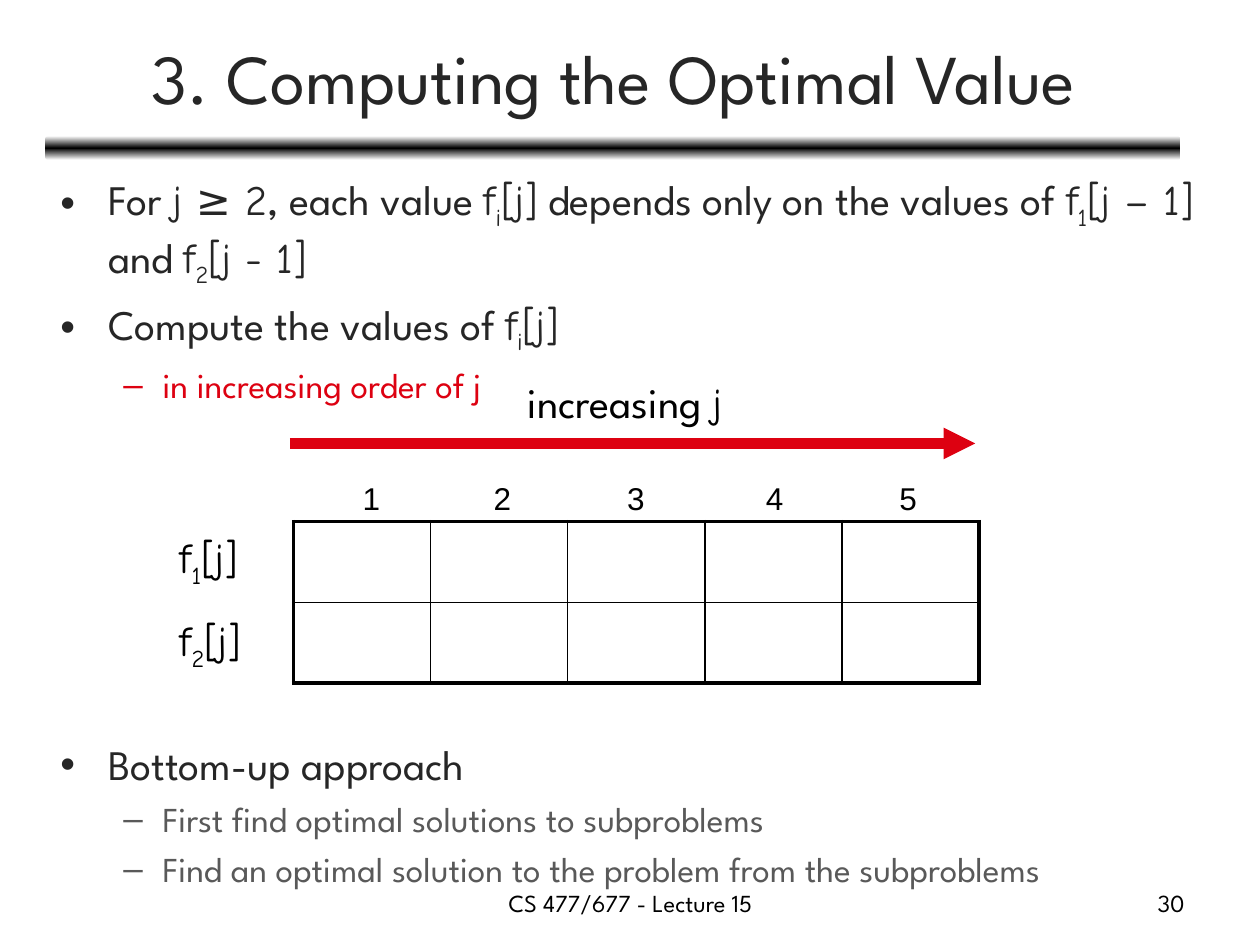
import copy

import lxml.etree
import pptx
import pptx.dml.color
import pptx.enum.shapes
import pptx.enum.text
import pptx.oxml
import pptx.oxml.ns
import pptx.util
from pptx.util import Inches, Pt

SANS, MATH = "League Spartan", "Comic Neue"
BLACK, DARK, GREY, RED = "000000", "262626", "595959", "DD0111"
ALIGN = pptx.enum.text.PP_ALIGN
qn = pptx.oxml.ns.qn
rgb = pptx.dml.color.RGBColor.from_string


def write(p, text, size, color, font=SANS, align=None):
    """Fill p; |...| marks maths, and _ makes the next character a subscript."""
    p.font.size, p.font.color.rgb = Pt(size), rgb(color)
    p.alignment = align
    parts = text.split("|")
    if len(parts) == 1:
        p.font.name = font
    for i, part in enumerate(parts):
        base, _, rest = part.partition("_")
        for piece, sub in ((base, False), (rest[:1], True), (rest[1:], False)):
            if piece:
                r = p.add_run()
                r.text = piece
                if len(parts) > 1:
                    r.font.name = MATH if i % 2 else font
                if sub:
                    r.font._element.set("baseline", "-25000")


def add_label(x, y, w, h, text, size, font=SANS, align=None):
    tf = s.shapes.add_textbox(Inches(x), Inches(y), Inches(w), Inches(h)).text_frame
    tf.word_wrap = align is not None
    write(tf.paragraphs[0], text, size, BLACK, font, align)


prs = pptx.Presentation()
prs.slide_width, prs.slide_height = Inches(10), Inches(7.5)
s = prs.slides.add_slide(prs.slide_layouts[1])

# Title and the gradient rule below it
title, body = s.placeholders
title.left, title.top, title.width, title.height = map(Inches, (0.37, 0.11, 9, 0.99))
title.text_frame.vertical_anchor = pptx.enum.text.MSO_ANCHOR.MIDDLE
title.text_frame.auto_size = pptx.enum.text.MSO_AUTO_SIZE.NONE
write(title.text_frame.paragraphs[0], "3. Computing the Optimal Value", 40, DARK,
      align=ALIGN.CENTER)

rule = s.shapes.add_shape(pptx.enum.shapes.MSO_SHAPE.ROUNDED_RECTANGLE,
                          Inches(0.36), Inches(1.08), Inches(9.01), Inches(0.19))
rule.shadow.inherit = False
rule.line.fill.background()
rule.fill.gradient()
rule.fill.gradient_angle = 90
stops = rule.fill._xPr.find(qn("a:gradFill")).find(qn("a:gsLst"))
stops.insert(1, copy.deepcopy(stops[0]))
for stop, position, color in zip(rule.fill.gradient_stops, (0, 0.5, 1),
                                 ("FFFFFF", BLACK, "FFFFFF")):
    stop.position, stop.color.rgb = position, rgb(color)

# Bullets: level, text, colour, space before; the large space holds the table
bullets = [
    (0, "For |j ≥ 2|, each value |f_i[j]| depends only on the values of "
        "|f_1[j – 1]| and |f_2[j - 1]|", DARK, 5.6),
    (0, "Compute the values of |f_i[j]|", DARK, 5.6),
    (1, "in increasing order of j", RED, 4.7),
    (0, "Bottom-up approach", DARK, 190),
    (1, "First find optimal solutions to subproblems", GREY, 4.7),
    (1, "Find an optimal solution to the problem from the subproblems", GREY, 4.7),
]
body.left, body.top, body.width, body.height = map(Inches, (0.38, 1.33, 9.46, 6.03))
tf = body.text_frame
tf.auto_size = pptx.enum.text.MSO_AUTO_SIZE.NONE
for i, (level, text, color, space) in enumerate(bullets):
    p = tf.add_paragraph() if i else tf.paragraphs[0]
    p.level, p.space_before = level, Pt(space)
    margin, indent = ((0.38, -0.38), (0.81, -0.31))[level]
    pPr = p._p.get_or_add_pPr()
    pPr.set("marL", str(Inches(margin)))
    pPr.set("indent", str(Inches(indent)))
    write(p, text, (24, 20)[level], color)

# Empty table with a heavy outer frame
ROWS, COLS = 2, 5
frame = s.shapes.add_table(ROWS, COLS, Inches(2.33), Inches(4.14),
                           Inches(5.44), Inches(1.28))
table = frame.table
table.first_row = table.horz_banding = False
for row in range(ROWS):
    for col in range(COLS):
        cell = table.cell(row, col)
        cell.fill.background()
        tcPr = cell._tc.get_or_add_tcPr()
        outer = {"L": col == 0, "R": col == COLS - 1, "T": row == 0, "B": row == ROWS - 1}
        for i, (side, heavy) in enumerate(outer.items()):
            ln = pptx.oxml.parse_xml(
                f'<a:ln{side} {pptx.oxml.ns.nsdecls("a")} w="{Pt(2.25 if heavy else 1)}">'
                f'<a:solidFill><a:srgbClr val="{BLACK}"/></a:solidFill></a:ln{side}>')
            tcPr.insert(i, ln)

# Row and column labels
add_label(1.33, 4.17, 0.86, 0.5, "|f_1[j]|", 24)
add_label(1.33, 4.83, 0.89, 0.5, "|f_2[j]|", 24)
for number, x in enumerate((2.78, 3.82, 4.88, 5.98, 7.04), 1):
    add_label(x, 3.75, 0.34, 0.4, str(number), 18, "Arial")

# Direction arrow
arrow = s.shapes.add_connector(pptx.enum.shapes.MSO_CONNECTOR.STRAIGHT,
                               Inches(2.3), Inches(3.52), Inches(7.74), Inches(3.52))
arrow.line.color.rgb, arrow.line.width = rgb(RED), Pt(6)
lxml.etree.SubElement(arrow.line._get_or_add_ln(), qn("a:tailEnd"), type="triangle")
lxml.etree.SubElement(arrow._element.spPr, qn("a:effectLst"))
add_label(4.09, 2.94, 2.14, 0.51, "increasing |j|", 24)

# Footer
add_label(3.42, 7, 3.17, 0.35, "CS 477/677 - Lecture 15", 14, align=ALIGN.CENTER)
add_label(7.17, 7, 2.33, 0.35, "30", 14, align=ALIGN.RIGHT)

prs.save("out.pptx")
